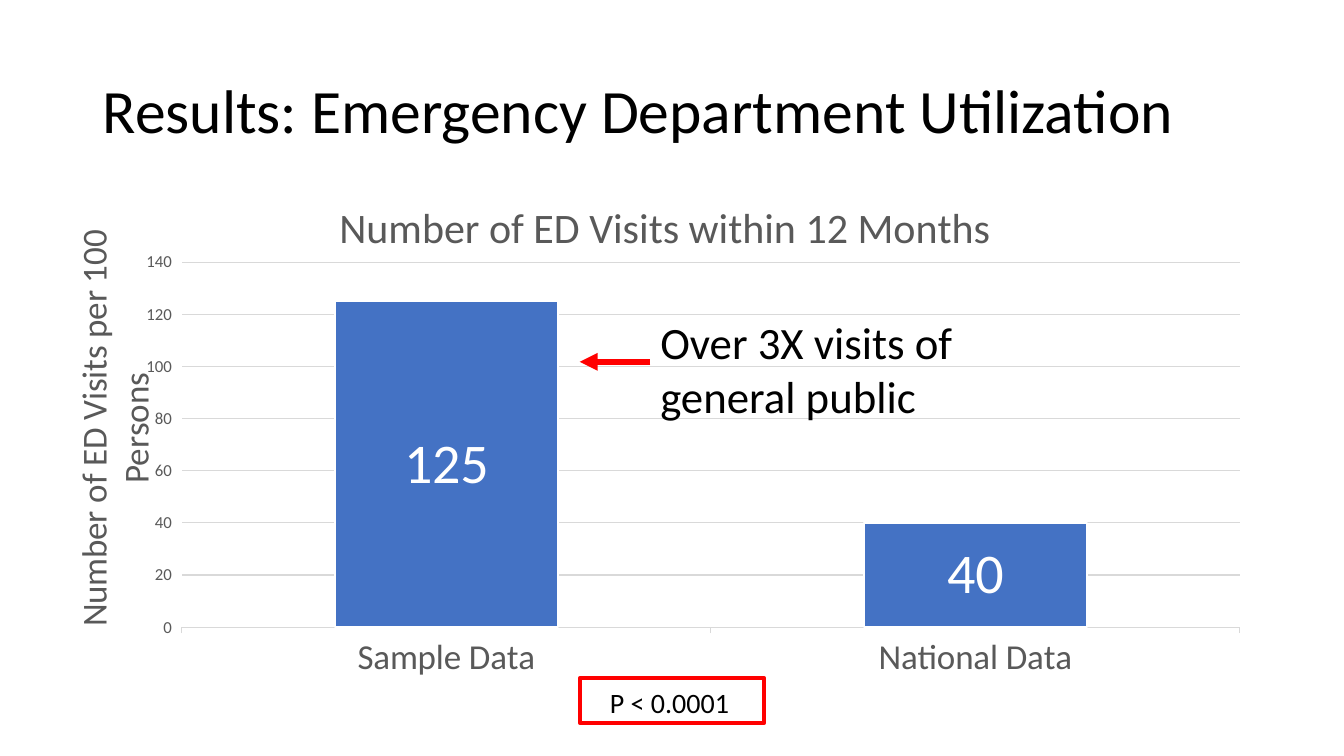
from pptx import Presentation
from pptx.chart.data import CategoryChartData
from pptx.dml.color import RGBColor
from pptx.enum.chart import XL_CHART_TYPE, XL_LABEL_POSITION, XL_TICK_MARK
from pptx.enum.shapes import MSO_CONNECTOR, MSO_SHAPE
from pptx.enum.text import MSO_ANCHOR
from pptx.oxml.ns import qn
from pptx.util import Inches, Pt
from lxml import etree

COLUMNS = XL_CHART_TYPE.COLUMN_CLUSTERED
CENTER = XL_LABEL_POSITION.CENTER
OUTSIDE = XL_TICK_MARK.OUTSIDE
STRAIGHT = MSO_CONNECTOR.STRAIGHT
RECTANGLE = MSO_SHAPE.RECTANGLE
TOP, MIDDLE = MSO_ANCHOR.TOP, MSO_ANCHOR.MIDDLE

BLACK = RGBColor(0x00, 0x00, 0x00)
WHITE = RGBColor(0xFF, 0xFF, 0xFF)
RED = RGBColor(0xFF, 0x00, 0x00)
BLUE = RGBColor(0x44, 0x72, 0xC4)
GRAY = RGBColor(0x59, 0x59, 0x59)
LIGHT_GRAY = RGBColor(0xD9, 0xD9, 0xD9)
FONT = "Calibri"

# text, (left, top, width, height), size, anchor, line spacing
TEXTS = [
    ("Results: Emergency Department Utilization", (0.92, 0.4, 11.5, 1.45), 44, MIDDLE, 0.9),
    ("P < 0.0001", (5.95, 6.75, 1.43, 0.44), 20, TOP, 1.0),
    ("Over 3X visits of general public", (6.45, 3.07, 3.85, 1.18), 32, TOP, 1.0),
]
VISITS = {"Sample Data": 125, "National Data": 40}
CHART_TITLE = "Number of ED Visits within 12 Months"
AXIS_TITLE = "Number of ED Visits per 100 Persons"
CHART_BOX = (0.51, 1.62, 12.09, 5.48)
# Fractions of the chart's width and height
PLOT_LAYOUT = {"layoutTarget": "inner", "xMode": "edge", "yMode": "edge",
               "x": 0.107, "y": 0.179, "w": 0.868, "h": 0.661}
TITLE_LAYOUTS = [
    {"xMode": "edge", "yMode": "edge", "x": 0.23, "y": 0.05},
    {"xMode": "edge", "yMode": "edge", "x": 0.01, "y": 0.11},
]
P_VALUE_FRAME = (5.75, 6.73, 1.83, 0.44)
ARROW = (6.45, 3.59, 5.75, 3.59)


def style(font, size, color):
    for name, value in {"name": FONT, "size": Pt(size), "bold": False}.items():
        setattr(font, name, value)
    font.color.rgb = color


def set_line(line, color, width):
    line.color.rgb = color
    line.width = Pt(width)


def set_layout(parent, position, values):
    """Give a chart part a manual layout, as its child number `position`."""
    layout = parent.find(qn("c:layout"))
    if layout is None:
        layout = etree.Element(qn("c:layout"))
        parent.insert(position, layout)
    manual = etree.SubElement(layout, qn("c:manualLayout"))
    for tag, value in values.items():
        etree.SubElement(manual, qn("c:" + tag)).set("val", str(value))


def set_title(owner, title, text, size):
    owner.has_title = True
    frame = title.text_frame
    frame.text = text
    style(frame.paragraphs[0].runs[0].font, size, GRAY)


def add_text(slide, text, box, size, anchor, spacing):
    frame = slide.shapes.add_textbox(*map(Inches, box)).text_frame
    frame.word_wrap = True
    frame.vertical_anchor = anchor
    paragraph = frame.paragraphs[0]
    paragraph.line_spacing = spacing
    run = paragraph.add_run()
    run.text = text
    style(run.font, size, BLACK)


def add_visits_chart(slide):
    data = CategoryChartData()
    data.categories = list(VISITS)
    data.add_series("Series 1", list(VISITS.values()))
    chart = slide.shapes.add_chart(COLUMNS, *map(Inches, CHART_BOX), data).chart
    chart.has_legend = False
    style(chart.font, 10, BLACK)

    groups, visits = chart.category_axis, chart.value_axis
    for axis, size in ((groups, 25), (visits, 12)):
        style(axis.tick_labels.font, size, GRAY)
        axis.major_tick_mark = OUTSIDE
    set_line(groups.format.line, LIGHT_GRAY, 0.75)
    visits.format.line.fill.background()
    set_line(visits.major_gridlines.format.line, LIGHT_GRAY, 0.75)
    for name, value in {"minimum_scale": 0, "maximum_scale": 140, "major_unit": 20}.items():
        setattr(visits, name, value)

    plot = chart.plots[0]
    plot.gap_width = 137
    plot.vary_by_categories = False
    bars = plot.series[0]
    bars.format.fill.solid()
    bars.format.fill.fore_color.rgb = BLUE
    set_line(bars.format.line, WHITE, 1.5)
    labels = bars.data_labels
    labels.show_value = True
    labels.position = CENTER
    style(labels.font, 40, WHITE)

    set_title(chart, chart.chart_title, CHART_TITLE, 30)
    set_title(visits, visits.axis_title, AXIS_TITLE, 25)
    for title, layout in zip(chart.element.iter(qn("c:title")), TITLE_LAYOUTS):
        set_layout(title, 1, layout)
    set_layout(next(chart.element.iter(qn("c:plotArea"))), 0, PLOT_LAYOUT)


def add_arrow(slide):
    arrow = slide.shapes.add_connector(STRAIGHT, *map(Inches, ARROW))
    set_line(arrow.line, RED, 4.25)
    properties = arrow.element.spPr
    etree.SubElement(properties.find(qn("a:ln")), qn("a:tailEnd")).set("type", "triangle")
    etree.SubElement(properties, qn("a:effectLst"))


def add_p_value_frame(slide):
    frame = slide.shapes.add_shape(RECTANGLE, *map(Inches, P_VALUE_FRAME))
    frame.shadow.inherit = False
    frame.fill.background()
    set_line(frame.line, RED, 3)


def main():
    deck = Presentation()
    deck.slide_width, deck.slide_height = Inches(13.33), Inches(7.5)
    slide = deck.slides.add_slide(deck.slide_layouts[6])
    heading, *notes = TEXTS
    add_text(slide, *heading)
    add_visits_chart(slide)
    for note in notes:
        add_text(slide, *note)
    add_arrow(slide)
    add_p_value_frame(slide)
    deck.save("out.pptx")


if __name__ == "__main__":
    main()
